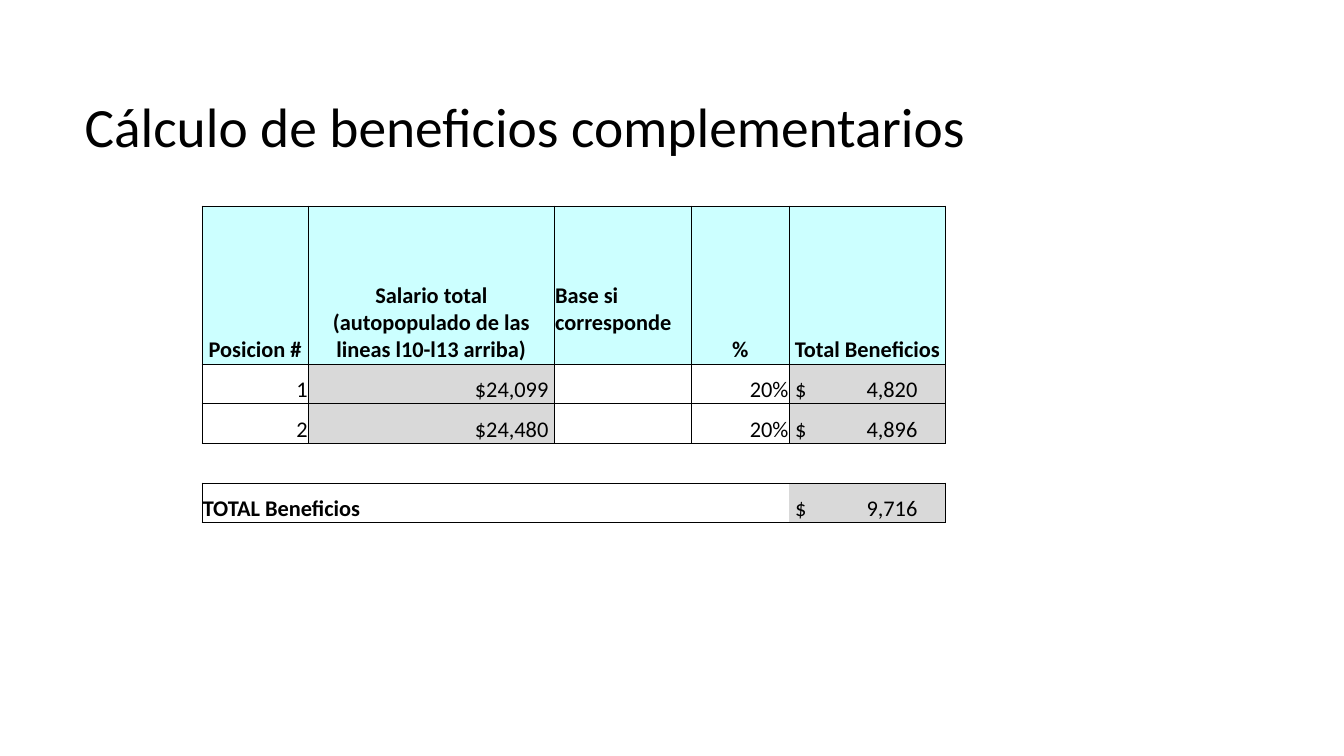
from dataclasses import dataclass

from lxml import etree
from pptx import Presentation
from pptx import util as u
from pptx.dml.color import RGBColor
from pptx.enum import text
from pptx.oxml import ns


@dataclass(frozen=True)
class Theme:
    font: str = "Calibri"
    title_size: float = 39.6
    table_size: float = 16
    ink: str = "000000"
    paper: str = "FFFFFF"
    header: str = "CCFFFF"
    computed: str = "D9D9D9"
    rule_width: float = 0.5


THEME = Theme()
LEFT, CENTER, RIGHT = (text.PP_ALIGN.LEFT, text.PP_ALIGN.CENTER,
                       text.PP_ALIGN.RIGHT)
COLUMNS = (2.68, 6.2, 3.45, 2.47, 3.94)
ROWS = (3.98, 1, 1, 1, 1)
HEADERS = ("Posicion #", "Salario total (autopopulado de las lineas l10-l13 arriba)",
           "Base si corresponde", "%", "Total Beneficios")
POSITIONS = (("1", "$24,099", "", "20%", "$\t4,820"),
             ("2", "$24,480", "", "20%", "$\t4,896"))
COMPUTED_COLUMNS = (1, 4)
ALL_SIDES = "LRTB"


def apply(target, **values):
    for name, value in values.items():
        setattr(target, name, value)


def write(para, wording, size, bold=False, align=LEFT):
    para.alignment = align
    span = para.add_run()
    span.text = wording
    apply(span.font, name=THEME.font, size=u.Pt(size), bold=bold)
    span.font.color.rgb = RGBColor.from_string(THEME.ink)


def add_title(page, wording):
    box = page.shapes.title
    apply(box, left=u.Cm(1.88), top=u.Cm(1.7), width=u.Cm(23.88), height=u.Cm(4.67))
    apply(box.text_frame, word_wrap=True, vertical_anchor=text.MSO_ANCHOR.MIDDLE,
          auto_size=text.MSO_AUTO_SIZE.NONE, margin_left=u.Cm(0.25),
          margin_top=u.Cm(0.13), margin_bottom=u.Cm(1.66))
    para = box.text_frame.paragraphs[0]
    para.line_spacing = 0.9
    write(para, wording, THEME.title_size)


def set_borders(cell, sides):
    """Rule the sides named by letter and clear the others."""
    props = cell._tc.get_or_add_tcPr()
    for side in ALL_SIDES:
        line = etree.SubElement(props, ns.qn(f"a:ln{side}"),
                                w=str(u.Pt(THEME.rule_width)))
        if side in sides:
            fill = etree.SubElement(line, ns.qn("a:solidFill"))
            etree.SubElement(fill, ns.qn("a:srgbClr"), val=THEME.ink)
        else:
            etree.SubElement(line, ns.qn("a:noFill"))


def add_right_tab(para, position):
    stops = etree.SubElement(para._p.get_or_add_pPr(), ns.qn("a:tabLst"))
    etree.SubElement(stops, ns.qn("a:tab"), pos=str(position), algn="r")


def fill_cell(cell, wording="", color=THEME.paper, sides=ALL_SIDES,
              bold=False, align=LEFT, **margins):
    set_borders(cell, sides)
    cell.fill.solid()
    cell.fill.fore_color.rgb = RGBColor.from_string(color)
    frame = dict(margin_left=u.Cm(0.02), margin_right=u.Cm(0.02),
                 margin_top=u.Cm(0.02), margin_bottom=0,
                 vertical_anchor=text.MSO_ANCHOR.BOTTOM)
    apply(cell, **{**frame, **margins})
    if wording:
        write(cell.text_frame.paragraphs[0], wording, THEME.table_size, bold, align)


def fill_amount(cell, wording, sides=ALL_SIDES):
    """Set the currency sign at the left and the figure at a right tab."""
    fill_cell(cell, wording, THEME.computed, sides, margin_left=u.Cm(0.15))
    add_right_tab(cell.text_frame.paragraphs[0], u.Cm(3.08))


def add_benefits_table(page):
    table = page.shapes.add_table(len(ROWS), len(COLUMNS), u.Cm(5.09), u.Cm(5.19),
                                  u.Cm(sum(COLUMNS)), u.Cm(sum(ROWS))).table
    apply(table, first_row=False, horz_banding=False)
    for column, width in zip(table.columns, COLUMNS):
        column.width = u.Cm(width)
    for row, height in zip(table.rows, ROWS):
        row.height = u.Cm(height)

    for index, wording in enumerate(HEADERS):
        layout = dict(align=CENTER)
        if index == 2:
            layout = dict(align=LEFT, margin_bottom=u.Cm(0.69))
        fill_cell(table.cell(0, index), wording, THEME.header, bold=True, **layout)

    for row, values in enumerate(POSITIONS, start=1):
        for index, wording in enumerate(values):
            cell = table.cell(row, index)
            if "\t" in wording:
                fill_amount(cell, wording)
            elif index in COMPUTED_COLUMNS:
                fill_cell(cell, wording, THEME.computed, align=RIGHT,
                          margin_right=u.Cm(0.15))
            else:
                fill_cell(cell, wording, align=RIGHT)

    for index in range(len(COLUMNS)):
        fill_cell(table.cell(3, index), sides="TB")

    table.cell(4, 0).merge(table.cell(4, 1))
    fill_cell(table.cell(4, 0), "TOTAL Beneficios", sides="LTB", bold=True)
    for index in (1, 2, 3):
        fill_cell(table.cell(4, index), sides="TB")
    fill_amount(table.cell(4, 4), "$\t9,716", sides="RTB")


def main():
    deck = Presentation()
    apply(deck, slide_width=u.Cm(33.87), slide_height=u.Cm(19.05))
    page = deck.slides.add_slide(deck.slide_layouts.get_by_name("Title Only"))
    add_title(page, "Cálculo de beneficios complementarios")
    add_benefits_table(page)
    deck.save("out.pptx")


if __name__ == "__main__":
    main()
